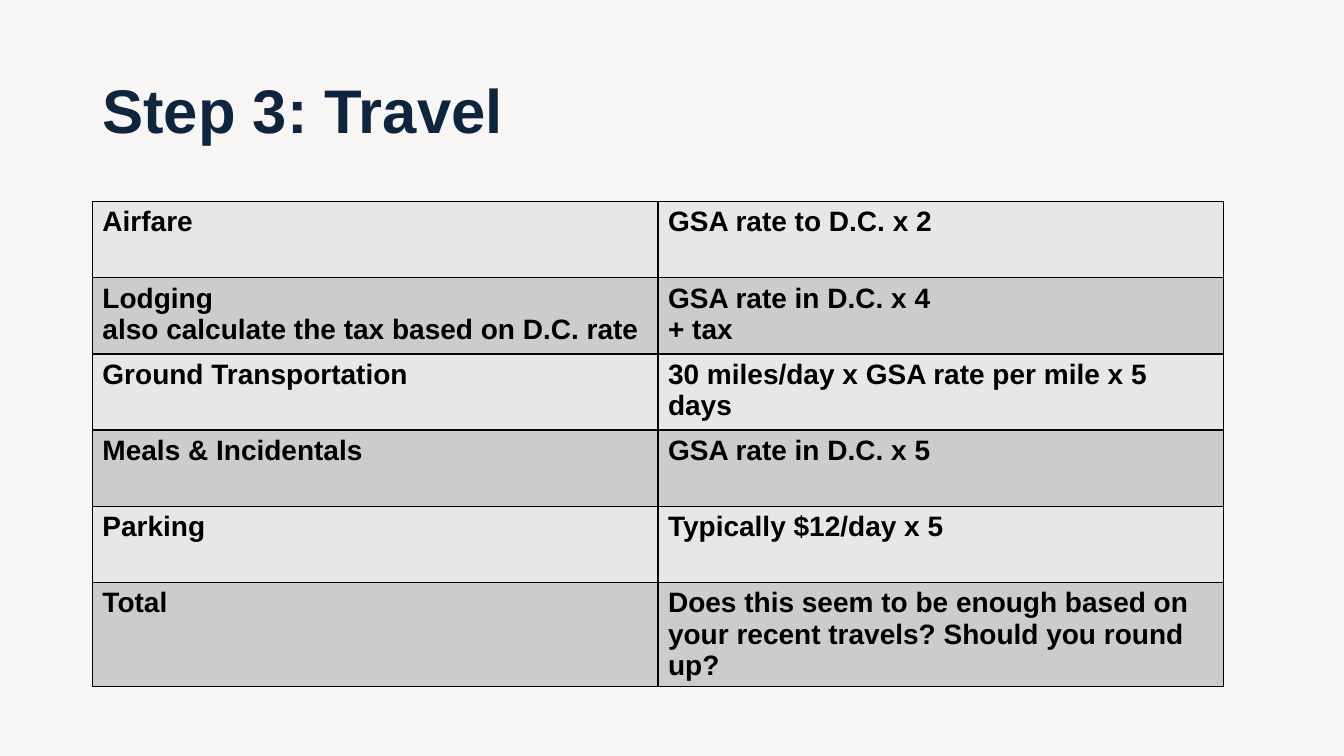
import pptx
import pptx.util
import pptx.dml.color
import pptx.enum.text
import lxml.etree
import pptx.oxml.ns

Pt = pptx.util.Pt

TITLE = "Step 3: Travel"
COSTS = [
    (["Airfare"], ["GSA rate to D.C. x 2"]),
    (["Lodging", "also calculate the tax based on D.C. rate"],
     ["GSA rate in D.C. x 4", "+ tax"]),
    (["Ground Transportation"], ["30 miles/day x GSA rate per mile x 5 days"]),
    (["Meals & Incidentals"], ["GSA rate in D.C. x 5"]),
    (["Parking"], ["Typically $12/day x 5"]),
    (["Total"], ["Does this seem to be enough based on your recent travels? "
                 "Should you round up?"]),
]
BANDS = ["E7E7E7", "CCCCCC"]
BACKGROUND, NAVY, BLACK = "F8F6F5", "0F253E", "000000"
LEFT, TABLE_TOP = 66, 144
COLUMN_WIDTH, ROW_HEIGHT = 404, 54.4


def color(value):
    return pptx.dml.color.RGBColor.from_string(value)


def add_text(para, text, size, ink):
    span = para.add_run()
    span.text = text
    span.font.name = "Arial"
    span.font.size = Pt(size)
    span.font.bold = True
    span.font.color.rgb = color(ink)


def add_borders(cell):
    properties = cell._tc.get_or_add_tcPr()
    for side in ("a:lnL", "a:lnR", "a:lnT", "a:lnB"):
        line = lxml.etree.SubElement(
            properties, pptx.oxml.ns.qn(side), w=str(Pt(1)))
        fill = lxml.etree.SubElement(line, pptx.oxml.ns.qn("a:solidFill"))
        lxml.etree.SubElement(fill, pptx.oxml.ns.qn("a:srgbClr"), val=BLACK)


def add_title(page):
    title = page.shapes.title
    title.left, title.top, title.width, title.height = (
        Pt(LEFT), Pt(28.8), Pt(828), Pt(104.4))
    frame = title.text_frame
    frame.word_wrap = True
    frame.vertical_anchor = pptx.enum.text.MSO_ANCHOR.MIDDLE
    para = frame.paragraphs[0]
    para.alignment = pptx.enum.text.PP_ALIGN.LEFT
    para.line_spacing = 0.9
    add_text(para, TITLE, 44, NAVY)


def add_costs(page):
    table = page.shapes.add_table(
        len(COSTS), 2, Pt(LEFT), Pt(TABLE_TOP),
        Pt(2 * COLUMN_WIDTH), Pt(len(COSTS) * ROW_HEIGHT)).table
    table.first_row = False
    for column in table.columns:
        column.width = Pt(COLUMN_WIDTH)
    for r, cost in enumerate(COSTS):
        table.rows[r].height = Pt(ROW_HEIGHT)
        for c, lines in enumerate(cost):
            cell = table.cell(r, c)
            add_borders(cell)
            cell.fill.solid()
            cell.fill.fore_color.rgb = color(BANDS[r % 2])
            frame = cell.text_frame
            for i, text in enumerate(lines):
                para = frame.add_paragraph() if i else frame.paragraphs[0]
                add_text(para, text, 20, BLACK)


def main():
    deck = pptx.Presentation()
    deck.slide_width, deck.slide_height = Pt(960), Pt(540)
    page = deck.slides.add_slide(deck.slide_layouts[5])
    page.background.fill.solid()
    page.background.fill.fore_color.rgb = color(BACKGROUND)
    add_title(page)
    add_costs(page)
    deck.save("out.pptx")


if __name__ == "__main__":
    main()
